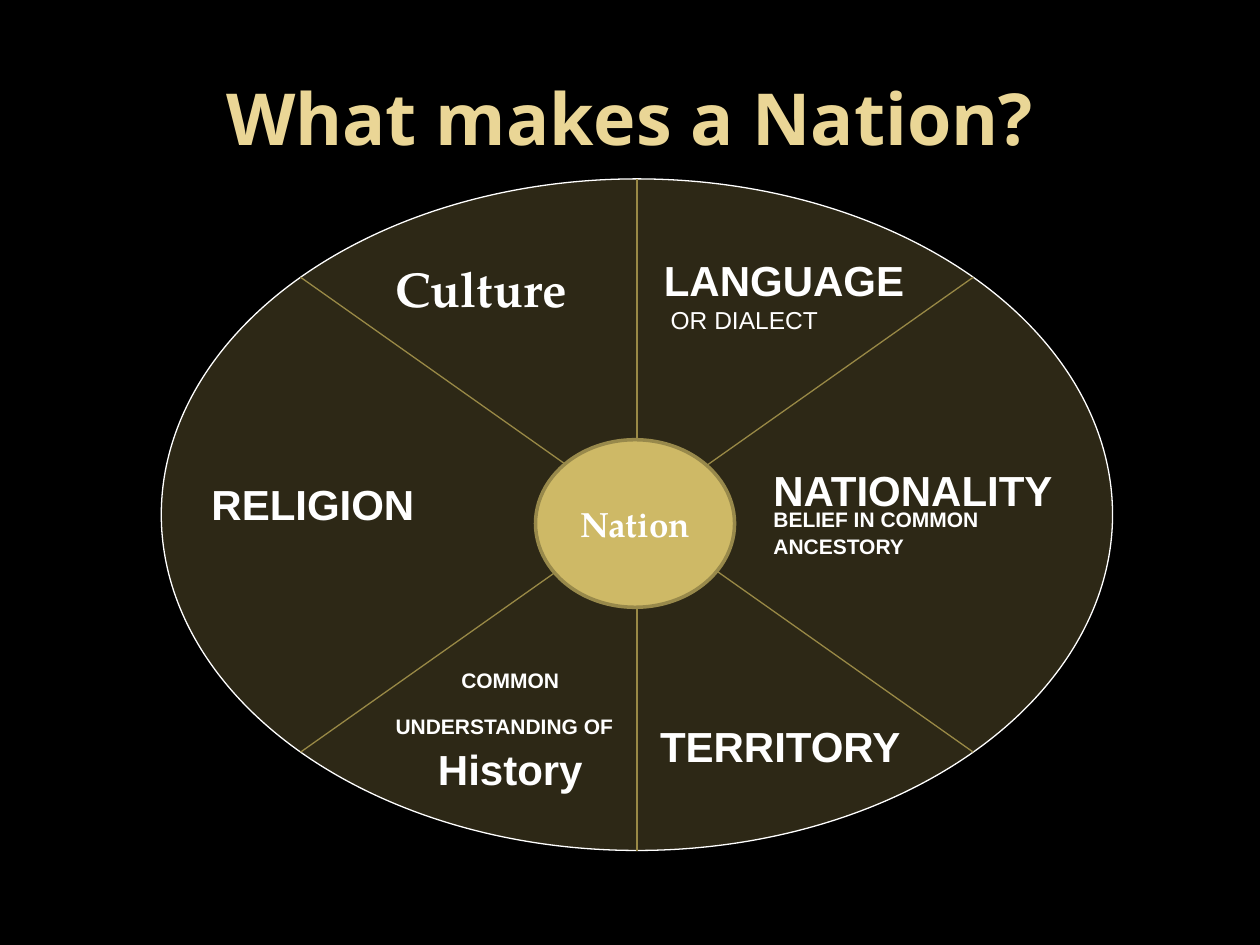
from copy import deepcopy
from math import cos, radians, sin

from lxml.etree import SubElement
from pptx import Presentation
from pptx.dml.color import RGBColor
from pptx.enum.shapes import MSO_CONNECTOR as CONN, MSO_SHAPE as SHAPE
from pptx.enum.text import MSO_ANCHOR as ANCHOR, MSO_AUTO_SIZE as AUTO, PP_ALIGN as ALIGN
from pptx.oxml.ns import qn
from pptx.util import Inches, Pt

COLORS = {"back": "000000", "title": "EAD696", "gold": "CEB966", "rim": "98894B",
          "spoke": "998946", "text": "FFFFFF"}
SANS, SERIF, HEAD = "Arial", "TeX Gyre Pagella", "Noto Sans"

TITLE = "What makes a Nation?"
WHEEL = (1.28, 1.42, 7.55, 5.33)
HUB = (4.25, 3.49, 1.58, 1.33)
SPOKE_ANGLES = [-90, 45, 135]
BIG, MID, SMALL = 24, 14, 12

LABELS = [
    {"at": (3.04, 2, 1.67, 0.57), "font": SERIF, "wrap": True,
     "paras": [[("Culture", 28, True)]]},
    {"at": (3.03, 5.25, 2.04, 1.11), "align": ALIGN.CENTER,
     "paras": [[("COMMON\nUNDERSTANDING OF", SMALL, True), (" \nHistory", BIG, True)]]},
    {"at": (5.17, 1.97, 2.11, 0.73),
     "paras": [[("LANGUAGE", BIG, True)], [(" OR DIALECT", MID, False)]]},
    {"at": (1.58, 3.75, 2.08, 0.5), "wrap": True,
     "paras": [[("RELIGION", BIG, True)]]},
    {"at": (5.14, 5.67, 2.13, 0.5),
     "paras": [[("TERRITORY", BIG, True)]]},
    {"at": (6.04, 3.64, 2.46, 0.9), "spacing": [None, 0.6, 0.6],
     "paras": [[("NATIONALITY", BIG, True)], [("BELIEF IN COMMON", SMALL, True)],
               [("ANCESTORY", SMALL, True), (" ", BIG, True)]]},
]


def rgb(name):
    return RGBColor.from_string(COLORS[name])


def add_run(p, text, font, size, bold, color="text"):
    """Add formatted text, giving each line break the format of its run."""
    for i, line in enumerate(text.split("\n")):
        if i:
            p.add_line_break()
            br = p._p.findall(qn("a:br"))[-1]
            br.append(deepcopy(r._r.rPr))
        r = p.add_run()
        r.text = line
        for key, value in {"name": font, "size": Pt(size), "bold": bold}.items():
            setattr(r.font, key, value)
        r.font.color.rgb = rgb(color)


def add_ellipse(s, box, line, width, alpha=None):
    """Add a gold ellipse, see-through when alpha is given in percent."""
    sp = s.shapes.add_shape(SHAPE.OVAL, *map(Inches, box))
    sp.shadow.inherit = False
    sp.fill.solid()
    sp.fill.fore_color.rgb = rgb("gold")
    if alpha:
        clr = sp._element.spPr.find(qn("a:solidFill")).find(qn("a:srgbClr"))
        SubElement(clr, qn("a:alpha"), val=str(alpha * 1000))
    sp.line.color.rgb = rgb(line)
    sp.line.width = Pt(width)
    return sp


def add_spoke(s, angle):
    """Add a line across the wheel through its centre."""
    x, y, w, h = WHEEL
    dx, dy = w / 2 * cos(radians(angle)), h / 2 * sin(radians(angle))
    cx, cy = x + w / 2, y + h / 2
    ends = (cx - dx, cy - dy, cx + dx, cy + dy)
    line = s.shapes.add_connector(CONN.STRAIGHT, *map(Inches, ends))
    line.line.color.rgb = rgb("spoke")
    line.line.width = Pt(0.75)
    SubElement(line._element.spPr, qn("a:effectLst"))


def add_label(s, label):
    """Add one text box of the wheel."""
    tf = s.shapes.add_textbox(*map(Inches, label["at"])).text_frame
    tf.word_wrap = label.get("wrap", False)
    tf.auto_size = AUTO.SHAPE_TO_FIT_TEXT
    spacing = label.get("spacing", [None] * len(label["paras"]))
    for i, (runs, gap) in enumerate(zip(label["paras"], spacing)):
        p = tf.add_paragraph() if i else tf.paragraphs[0]
        p.alignment = label.get("align", ALIGN.LEFT)
        p.line_spacing = gap
        for text, size, bold in runs:
            add_run(p, text, label.get("font", SANS), size, bold)


def fill_centred(sp, text, font, size, color):
    """Write one bold line in the middle of a shape."""
    tf = sp.text_frame
    tf.vertical_anchor = ANCHOR.MIDDLE
    tf.word_wrap = True
    p = tf.paragraphs[0]
    p.alignment = ALIGN.CENTER
    add_run(p, text, font, size, True, color)


def main():
    """Build the wheel of what makes a nation."""
    prs = Presentation()
    prs.slide_width, prs.slide_height = Inches(10), Inches(7.5)
    s = prs.slides.add_slide(prs.slide_layouts[5])
    s.background.fill.solid()
    s.background.fill.fore_color.rgb = rgb("back")

    title = s.shapes.title
    place = {"left": 0.5, "top": 0.3, "width": 9, "height": 1.25}
    for key, value in place.items():
        setattr(title, key, Inches(value))
    fill_centred(title, TITLE, HEAD, 41, "title")

    add_ellipse(s, WHEEL, "text", 0.75, alpha=22)
    for angle in SPOKE_ANGLES:
        add_spoke(s, angle)
    for label in LABELS:
        add_label(s, label)
    fill_centred(add_ellipse(s, HUB, "rim", 2), "Nation", SERIF, 20, "text")
    prs.save("out.pptx")


if __name__ == "__main__":
    main()
